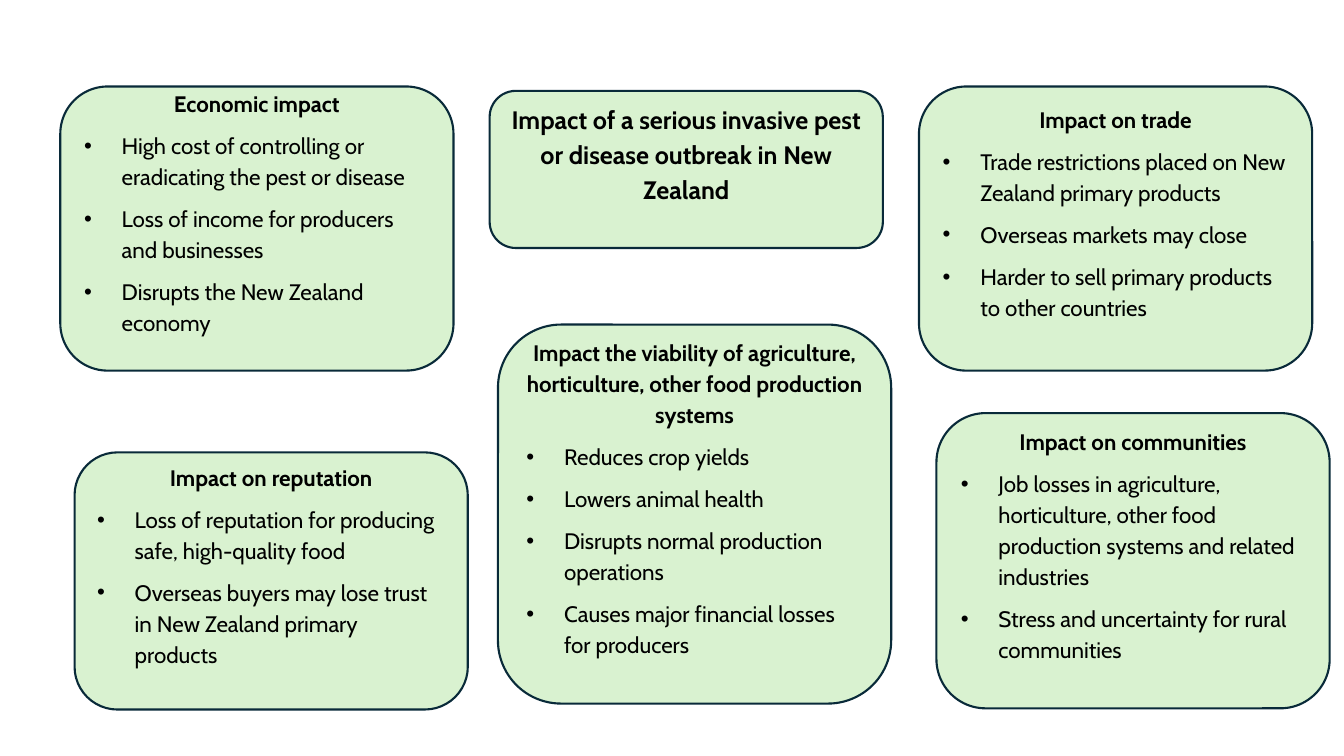
from lxml.etree import SubElement as Sub
from pptx import Presentation
from pptx.dml.color import RGBColor
from pptx.enum.shapes import MSO_SHAPE as Kind
from pptx.enum.text import MSO_ANCHOR as Anchor, MSO_AUTO_SIZE as Fit, PP_ALIGN as Align
from pptx.oxml.ns import qn
from pptx.util import Cm, Pt

GREEN = RGBColor(0xD9, 0xF2, 0xD0)
NAVY = RGBColor(0x09, 0x2A, 0x39)
BLACK = RGBColor(0, 0, 0)
FONT = "Cabin"
WIDE = 9.91
HEAD = (12.34, 2.29, WIDE, 3.96)
TITLE = "Impact of a serious invasive pest or disease outbreak in New Zealand"

CARDS = [
    ((12.55, 8.18, WIDE, 9.55),
     "Impact the viability of agriculture, horticulture, other food production systems",
     ["Reduces crop yields",
      "Lowers animal health",
      "Disrupts normal production operations",
      "Causes major financial losses for producers"]),
    ((23.16, 2.18, WIDE, 7.16),
     "Impact on trade",
     ["Trade restrictions placed on New Zealand primary products",
      "Overseas markets may close",
      "Harder to sell primary products to other countries"]),
    ((1.52, 2.18, WIDE, 7.16),
     "Economic impact",
     ["High cost of controlling or eradicating the pest or disease",
      "Loss of income for producers and businesses",
      "Disrupts the New Zealand economy"]),
    ((23.6, 10.41, WIDE, 7.44),
     "Impact on communities",
     ["Job losses in agriculture, horticulture, other food production systems "
      "and related industries",
      "Stress and uncertainty for rural communities"]),
    ((1.88, 11.4, WIDE, 6.48),
     "Impact on reputation",
     ["Loss of reputation for producing safe, high-quality food",
      "Overseas buyers may lose trust in New Zealand primary products"]),
]


def add_box(slide, area):
    box = slide.shapes.add_shape(Kind.ROUNDED_RECTANGLE, *map(Cm, area))
    box.shadow.inherit = False
    box.fill.solid()
    box.fill.fore_color.rgb = GREEN
    box.line.color.rgb = NAVY
    box.line.width = Pt(1.5)
    return box


def set_frame(frame, side, top, base):
    frame.word_wrap = True
    frame.auto_size = Fit.NONE
    frame.vertical_anchor = Anchor.MIDDLE
    frame.margin_left = frame.margin_right = Cm(side)
    frame.margin_top, frame.margin_bottom = Cm(top), Cm(base)


def add_text(para, text, size, bold, align):
    para.alignment = align
    para.line_spacing = 1.15
    para.space_after = Pt(8)
    run = para.add_run()
    run.text = text
    run.font.name, run.font.size, run.font.bold = FONT, Pt(size), bold
    run.font.color.rgb = BLACK


def add_dot(para):
    props = para._p.get_or_add_pPr()
    props.set("marL", str(Cm(0.95)))
    props.set("indent", str(Cm(-0.95)))
    Sub(props, qn("a:buFont"), typeface="Arial")
    Sub(props, qn("a:buChar"), char="•")


def add_card(slide, area, head, items):
    frame = add_box(slide, area).text_frame
    set_frame(frame, 0.25, 0.13, 1)
    add_text(frame.paragraphs[0], head, 16, True, Align.CENTER)
    for item in items:
        para = frame.add_paragraph()
        add_dot(para)
        add_text(para, item, 16, False, Align.LEFT)


def add_title(slide):
    add_box(slide, HEAD)
    title = slide.shapes.title
    title.left, title.top, title.width, title.height = map(Cm, HEAD)
    set_frame(title.text_frame, 0.45, 0.32, 1.2)
    add_text(title.text_frame.paragraphs[0], TITLE, 18, True, Align.CENTER)
    slide.shapes._spTree.append(title._element)


def main():
    """Build the slide on the impacts of a pest or disease outbreak."""
    deck = Presentation()
    deck.slide_width, deck.slide_height = Cm(33.87), Cm(19.05)
    slide = deck.slides.add_slide(deck.slide_layouts[5])
    add_title(slide)
    for card in CARDS:
        add_card(slide, *card)
    deck.save("out.pptx")


if __name__ == "__main__":
    main()
